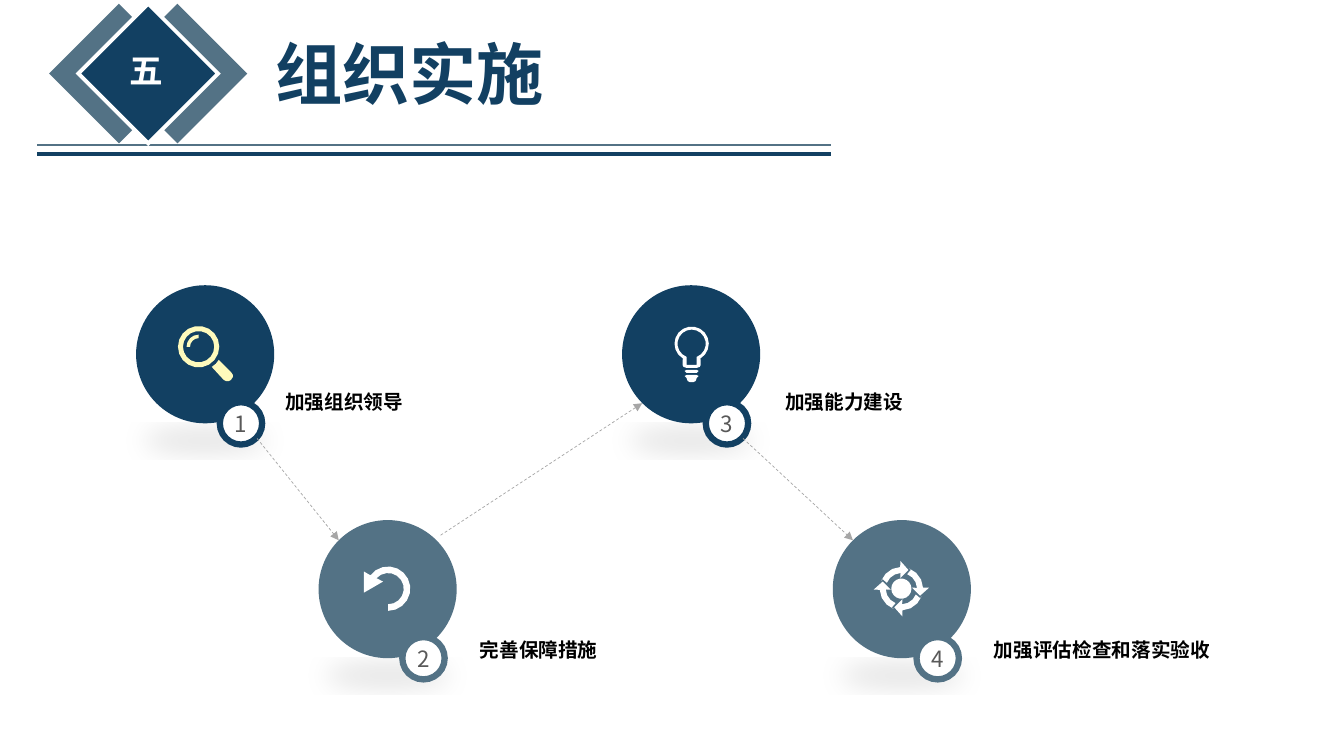
"""Build the slide on putting the plan to work: four linked steps under a title."""
import math
from dataclasses import dataclass

import lxml.etree
import pptx
import pptx.dml.color
import pptx.enum.dml
import pptx.enum.shapes
import pptx.enum.text
import pptx.oxml.ns
import pptx.util

Inches = pptx.util.Inches
Kind = pptx.enum.shapes.MSO_SHAPE
Align = pptx.enum.text.PP_ALIGN
Point = tuple[float, float]
Loop = list[Point]

NAVY, SLATE, WHITE, CREAM = "124062", "537285", "FFFFFF", "FEFABC"
FONT = "Noto Sans CJK SC"
DISC, BADGE, SIDE = 1.37, 0.42, 0.98


@dataclass
class Step:
    num: str
    label: str
    left: float
    top: float
    color: str
    text_at: Point


@dataclass
class Line:
    start: Point
    end: Point
    color: str
    width: float
    arrow: bool = False


@dataclass
class Icon:
    color: str
    loops: list[Loop]


def paint(target, color: str) -> None:
    if hasattr(target, "solid"):
        target.solid()
        target = target.fore_color
    target.rgb = pptx.dml.color.RGBColor.from_string(color)


def add_xml(parent, tag: str, **attrs: str):
    return lxml.etree.SubElement(parent, pptx.oxml.ns.qn(tag), attrs)


def write(frame, text: str, *, size: float, color: str, bold: bool = False,
          align=Align.LEFT) -> None:
    para = frame.paragraphs[0]
    para.alignment = align
    run = para.add_run()
    run.text = text
    run.font.size = pptx.util.Pt(size)
    run.font.name = FONT
    run.font.bold = bold
    paint(run.font.color, color)
    add_xml(run.font._element, "a:ea", typeface=FONT)


def add_text(slide, text: str, at: Point, width: float, height: float, **style) -> None:
    box = slide.shapes.add_textbox(*map(Inches, (*at, width, height)))
    box.text_frame.word_wrap = False
    box.text_frame.auto_size = pptx.enum.text.MSO_AUTO_SIZE.SHAPE_TO_FIT_TEXT
    write(box.text_frame, text, **style)


def add_shape(slide, kind, left: float, top: float, side: float, fill: str,
              edge: str = "", width: float = 0):
    shape = slide.shapes.add_shape(kind, *map(Inches, (left, top, side, side)))
    shape.shadow.inherit = False
    paint(shape.fill, fill)
    if edge:
        paint(shape.line.fill, edge)
        shape.line.width = pptx.util.Pt(width)
        add_xml(shape.line._ln, "a:miter", lim="800000")
    else:
        shape.line.fill.background()
    return shape


def add_gem(slide, left: float, color: str, **edge) -> None:
    gem = add_shape(slide, Kind.ROUNDED_RECTANGLE, left, 0.24, SIDE, color, **edge)
    gem.adjustments[0] = 0
    gem.rotation = 45


def add_line(slide, line: Line) -> None:
    link = slide.shapes.add_connector(
        pptx.enum.shapes.MSO_CONNECTOR.STRAIGHT, *map(Inches, line.start + line.end))
    paint(link.line.fill, line.color)
    link.line.width = pptx.util.Pt(line.width)
    if line.arrow:
        link.line.dash_style = pptx.enum.dml.MSO_LINE.DASH
        add_xml(link.line._ln, "a:tailEnd", type="triangle")
    add_xml(link._element.spPr, "a:effectLst")


def add_step(slide, step: Step) -> None:
    disc = add_shape(slide, Kind.OVAL, step.left, step.top, DISC, step.color)
    effects = disc._element.spPr.find(pptx.oxml.ns.qn("a:effectLst"))
    shade = add_xml(effects, "a:outerShdw", blurRad="241300", dist="38100",
                    dir="5400000", sx="90000", sy="-19000", rotWithShape="0")
    add_xml(add_xml(shade, "a:srgbClr", val="000000"), "a:alpha", val="10000")
    badge = add_shape(slide, Kind.OVAL, step.left + 0.83, step.top + 1.16, BADGE,
                      WHITE, step.color, 4.5)
    frame = badge.text_frame
    frame.margin_left = frame.margin_right = frame.margin_top = frame.margin_bottom = 0
    frame.vertical_anchor = pptx.enum.text.MSO_ANCHOR.MIDDLE
    write(frame, step.num, size=16, color="595959", align=Align.CENTER)
    add_text(slide, step.label, step.text_at, 0.2 + 0.196 * len(step.label), 0.34,
             size=14, color="000000", bold=True)


def arc(mid: Point, rad: float, start: float, end: float) -> Loop:
    count = max(2, round(abs(end - start) / 20))
    turns = [math.radians(start + (end - start) * i / count) for i in range(count + 1)]
    return [(mid[0] + rad * math.cos(t), mid[1] + rad * math.sin(t)) for t in turns]


def ring(mid: Point, *radii: float) -> list[Loop]:
    return [arc(mid, rad, 0, 360)[:-1] for rad in radii]


def blade(mid: Point, turn: float) -> Loop:
    head = [(0.275, -0.01), (0.185, 0.07), (0.105, -0.01)]
    cos, sin = math.cos(math.radians(turn)), math.sin(math.radians(turn))
    tip = [(mid[0] + x * cos - y * sin, mid[1] + x * sin + y * cos) for x, y in head]
    return (arc(mid, 0.215, turn - 69, turn - 3) + tip
            + arc(mid, 0.155, turn - 3, turn - 68)
            + arc(mid, 0.21, turn - 63, turn - 63)[:1])


def add_icon(shapes, icon: Icon) -> None:
    loops = [[(Inches(x), Inches(y)) for x, y in loop] for loop in icon.loops]
    form = shapes.build_freeform(*loops[0][0], scale=1.0)
    for i, loop in enumerate(loops):
        if i:
            form.move_to(*loop[0])
        form.add_line_segments(loop[1:], close=True)
    shape = form.convert_to_shape()
    shape.shadow.inherit = False
    paint(shape.fill, icon.color)
    shape.line.fill.background()


STEPS = [
    Step("1", "加强组织领导", 1.35, 2.83, NAVY, (2.73, 3.82)),
    Step("2", "完善保障措施", 3.16, 5.16, SLATE, (4.66, 6.28)),
    Step("3", "加强能力建设", 6.17, 2.83, NAVY, (7.69, 3.82)),
    Step("4", "加强评估检查和落实验收", 8.26, 5.16, SLATE, (9.76, 6.28)),
]
ARROWS = [Line(start, end, "A6A6A6", 0.5, True) for start, end in [
    ((2.55, 4.35), (3.36, 5.36)), ((4.37, 5.31), (6.37, 4)), ((7.37, 4.35), (8.46, 5.36))]]
LENS, BACK, BULB, WHEEL = (1.97, 3.44), (3.85, 5.84), (6.86, 3.41), (8.94, 5.84)
GLASS = [
    Icon(CREAM, [[(2.17, 3.57), (2.29, 3.69), (2.31, 3.72), (2.31, 3.74), (2.29, 3.77),
                  (2.27, 3.78), (2.24, 3.78), (2.22, 3.77), (2.1, 3.64), (2.14, 3.61)]]),
    Icon(CREAM, ring(LENS, 0.205, 0.155)),
    Icon(CREAM, [arc(LENS, 0.12, 180, 270) + arc(LENS, 0.085, 270, 180)]),
]
ICONS = [
    Icon(WHITE, [blade(WHEEL, turn) for turn in range(0, 360, 90)] + ring(WHEEL, 0.1)),
    Icon(WHITE, [
        arc(BULB, 0.17, 121, 419) + [(6.95, 3.62), (6.94, 3.64), (6.91, 3.65),
                                     (6.81, 3.65), (6.78, 3.64), (6.77, 3.62)],
        arc(BULB, 0.14, 111, 429) + [(6.91, 3.62), (6.81, 3.62)],
        [(6.81, 3.67), (6.91, 3.67), (6.93, 3.68), (6.91, 3.7), (6.81, 3.7), (6.79, 3.68)],
        [(6.81, 3.72), (6.91, 3.72), (6.93, 3.73), (6.91, 3.75), (6.9, 3.78),
         (6.88, 3.79), (6.84, 3.79), (6.82, 3.78), (6.81, 3.75), (6.79, 3.73)]]),
    Icon(WHITE, [arc(BACK, 0.22, 90, -143) + [(3.61, 5.67), (3.61, 5.88), (3.8, 5.77)]
                 + arc(BACK, 0.155, -138, 90)]),
]


def main() -> None:
    deck = pptx.Presentation()
    deck.slide_width, deck.slide_height = Inches(13.33), Inches(7.5)
    slide = deck.slides.add_slide(deck.slide_layouts[6])
    add_line(slide, Line((8.24, 1.44), (0.37, 1.44), SLATE, 1))
    add_gem(slide, 1.27, SLATE)
    add_gem(slide, 0.69, SLATE)
    add_gem(slide, 0.98, NAVY, edge=WHITE, width=2.75)
    add_line(slide, Line((8.24, 1.53), (0.37, 1.53), NAVY, 3))
    add_text(slide, "组织实施", (2.63, 0.27), 2.89, 0.91, size=48, color=NAVY, bold=True)
    for step in STEPS:
        add_step(slide, step)
    for arrow in ARROWS:
        add_line(slide, arrow)
    for icon in ICONS:
        add_icon(slide.shapes, icon)
    group = slide.shapes.add_group_shape()
    for icon in GLASS:
        add_icon(group.shapes, icon)
    add_text(slide, "五", (1.19, 0.45), 0.54, 0.5, size=24, color=WHITE, bold=True)
    deck.save("out.pptx")


if __name__ == "__main__":
    main()
